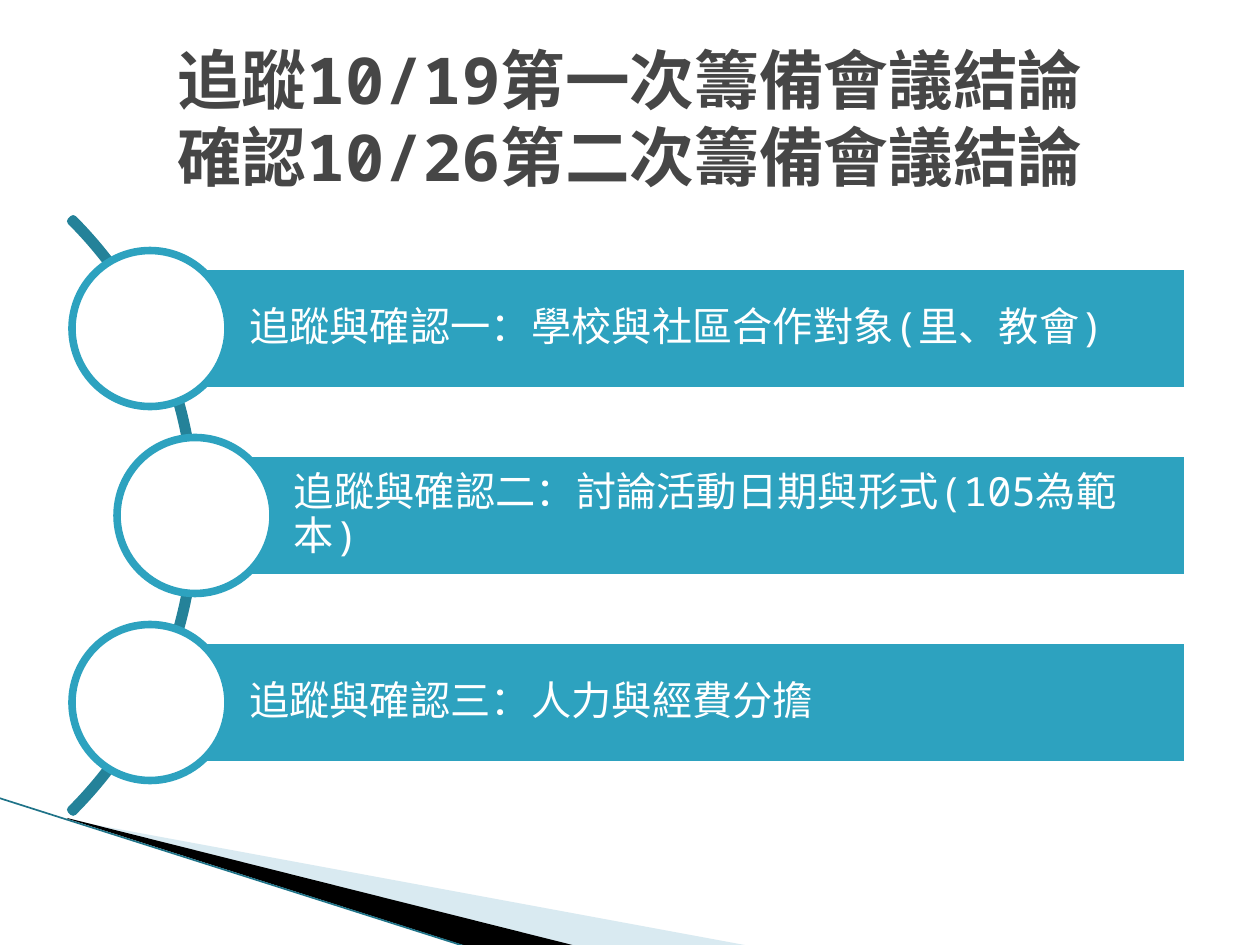
from lxml import etree
from pptx import Presentation
from pptx import util as u
from pptx.dml.color import RGBColor
from pptx.enum import shapes, text
from pptx.oxml.ns import qn

SCALE = 914400 / 126
MONO = "Noto Sans Mono"
CJK = "Noto Sans CJK TC"
COLORS = {"white": "FFFFFF", "black": "000000", "teal": "2DA2BF", "arc": "248299",
          "pale": "A0CBDC", "edge": "1F7388", "title": "464646"}
ITEMS = [
    ("追蹤與確認一：學校與社區合作對象(里、教會)", 150),
    ("追蹤與確認二：討論活動日期與形式(105為範本)", 195),
    ("追蹤與確認三：人力與經費分擔", 150),
]


def px(value):
    return u.Emu(round(value * SCALE))


def color(name):
    return RGBColor.from_string(COLORS[name])


def style_span(span, font, size, ink, bold=False):
    span.font.name = font
    span.font.size = u.Pt(size)
    span.font.bold = bold
    span.font.color.rgb = color(ink)
    latin = span.font._element.find(qn("a:latin"))
    east = etree.Element(qn("a:ea"), typeface=font)
    latin.addnext(east)


def paint(shape, fill, line=None):
    shape.shadow.inherit = False
    shape.fill.solid()
    shape.fill.fore_color.rgb = color(fill)
    if line:
        shape.line.color.rgb = color(line)
        shape.line.width = u.Pt(4.33)
    else:
        shape.line.fill.background()


def add_preset(page, kind, box, fill, line):
    shape = page.shapes.add_shape(kind, *map(px, box))
    paint(shape, fill, line)
    return shape


def add_wedge(page, points, fill, alpha=100):
    builder = page.shapes.build_freeform(*points[0], scale=SCALE)
    builder.add_line_segments(points[1:], close=True)
    wedge = builder.convert_to_shape()
    paint(wedge, fill)
    if alpha < 100:
        tint = wedge._element.spPr.find(qn("a:solidFill"))[0]
        etree.SubElement(tint, qn("a:alpha"), val=str(alpha * 1000))


def add_corner(page, left, top):
    def place(points):
        return [(left + x, top + y) for x, y in points]

    add_wedge(page, place([(69, 22), (750, 148), (575, 148), (69, 21)]), "pale", 40)
    add_wedge(page, place([(67, 20), (576, 148), (469, 149), (68, 21)]), "black")
    ends = place([(-1, 0), (467, 149)])
    edge = page.shapes.add_connector(
        shapes.MSO_CONNECTOR.STRAIGHT, *map(px, ends[0] + ends[1]))
    edge.line.color.rgb = color("edge")
    edge.line.width = u.Pt(0.95)
    etree.SubElement(edge._element.spPr, qn("a:effectLst"))


def add_item(page, label, left, top, right, height):
    bar = add_preset(page, shapes.MSO_SHAPE.RECTANGLE,
                     (left, top, right - left, height), "teal", "white")
    frame = bar.text_frame
    frame.word_wrap = True
    frame.vertical_anchor = text.MSO_ANCHOR.MIDDLE
    frame.margin_left = px(99)
    frame.margin_top = frame.margin_right = frame.margin_bottom = px(8)
    para = frame.paragraphs[0]
    para.alignment = text.PP_ALIGN.LEFT
    para.line_spacing = 0.9
    for part, font in zip(label.partition("："), (MONO, CJK, MONO)):
        span = para.add_run()
        span.text = part
        style_span(span, font, 23, "white")
    size = 156
    add_preset(page, shapes.MSO_SHAPE.OVAL,
               (left - size / 2, top + (height - size) / 2, size, size), "white", "teal")


def add_list(page, left, top, right, pitch):
    arc = add_preset(page, shapes.MSO_SHAPE.BLOCK_ARC,
                     (left - 715, top - 170, 839, 839), "arc", "arc")
    for index, value in enumerate((189, 27, 0.004)):
        arc.adjustments[index] = value
    for row, (label, start) in enumerate(ITEMS):
        add_item(page, label, start, top + row * pitch, right, 125)


def add_title(page, box):
    title = page.shapes.title
    title.left, title.top, title.width, title.height = map(px, box)
    frame = title.text_frame
    frame.word_wrap = True
    frame.vertical_anchor = text.MSO_ANCHOR.MIDDLE
    para = frame.paragraphs[0]
    para.text = "追蹤10/19第一次籌備會議結論\v確認10/26第二次籌備會議結論"
    para.alignment = text.PP_ALIGN.CENTER
    para.line_spacing = 1.0
    for span in para.runs:
        style_span(span, MONO, 36.9, "title", True)


def main():
    deck = Presentation()
    deck.slide_width, deck.slide_height = px(1260), px(945)
    page = deck.slides.add_slide(deck.slide_layouts[5])
    add_corner(page, 0, 798)
    add_list(page, 72, 266, 1188, 187)
    add_title(page, (63, 38, 1134, 158))
    deck.save("out.pptx")


if __name__ == "__main__":
    main()
